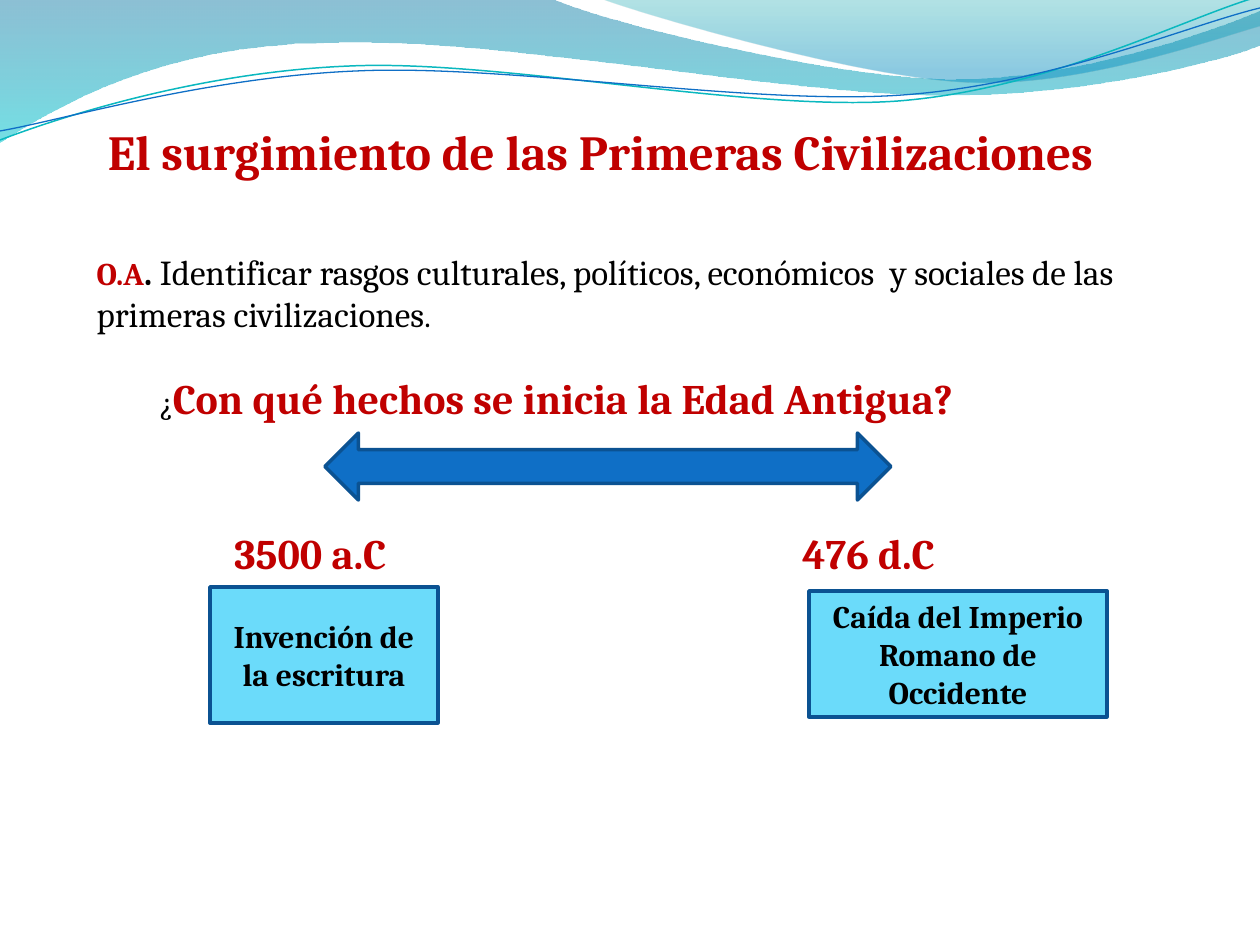
from lxml import etree
from pptx import Presentation, util as u
from pptx.dml.color import RGBColor
from pptx.enum import shapes, text
from pptx.oxml import ns

SCALE = u.Inches(1) / 126
COLORS = {"red": "C00000", "black": "000000", "blue": "0F6FC6", "edge": "0B5292",
          "sky": "6BDBFA", "teal": "0AB8BF"}
FONT = "Cambria"

BANDS = [
    ([(0, 0), (554, 0), (600, 21, 837, 79, 955, 79), (1075, 79, 1207, 33, 1260, 11),
      (1260, 45), (1239, 55, 1096, 96, 940, 95), (784, 95, 481, 35, 324, 43),
      (163, 45, 58, 105, 0, 142)],
     [(0, "0074A1", 45), (100, "00C6CF", 55)]),
    ([(604, 0), (641, 14, 859, 78, 969, 82), (1079, 87, 1211, 40, 1260, 26), (1260, 0)],
     [(0, "00A1A9", 30), (80, "008BBF", 45)]),
]
LINES = [
    ([(0, 140), (60, 117, 199, 72, 349, 66), (498, 59, 747, 112, 898, 101),
      (1050, 89, 1182, 19, 1257, -3)], "teal", 0.85),
    ([(0, 131), (59, 121, 207, 77, 357, 71), (508, 64, 752, 106, 903, 95),
      (1053, 84, 1186, 26, 1260, 8)], "blue", 0.75),
]


def px(n):
    return u.Emu(round(n * SCALE))


def color(name):
    return RGBColor.from_string(COLORS[name])


def write(para, words, size=18, tint="black", bold=False):
    run = para.add_run()
    run.text = words
    font = run.font
    font.name, font.size, font.bold = FONT, u.Pt(size), bold
    font.color.rgb = color(tint)


def bend(shape, parts):
    nodes = iter(list(shape._element.iter(ns.qn("a:lnTo"))))
    for part in parts[1:]:
        node = next(nodes)
        if len(part) == 2:
            continue
        curve = etree.Element(ns.qn("a:cubicBezTo"))
        node.addprevious(curve)
        for knot in (node, next(nodes), next(nodes)):
            curve.append(knot[0])
            knot.getparent().remove(knot)


def trace(slide, parts, x, y, close):
    points = [(part[i] + x, part[i + 1] + y)
              for part in parts for i in range(0, len(part), 2)]
    pen = slide.shapes.build_freeform(*points[0], scale=SCALE)
    pen.add_line_segments(points[1:], close=close)
    shape = pen.convert_to_shape()
    bend(shape, parts)
    shape.shadow.inherit = False
    shape.fill.background()
    return shape


def shade(shape, stops):
    props = shape._element.spPr
    grad = etree.Element(ns.qn("a:gradFill"), rotWithShape="1")
    row = etree.SubElement(grad, ns.qn("a:gsLst"))
    for pos, tint, alpha in stops:
        stop = etree.SubElement(row, ns.qn("a:gs"), pos=str(pos * 1000))
        fill = etree.SubElement(stop, ns.qn("a:srgbClr"), val=tint)
        etree.SubElement(fill, ns.qn("a:alpha"), val=str(alpha * 1000))
    etree.SubElement(grad, ns.qn("a:lin"), ang="5400000", scaled="0")
    props.replace(props.find(ns.qn("a:noFill")), grad)


def waves(slide, x, y):
    for parts, stops in BANDS:
        band = trace(slide, parts, x, y, True)
        band.line.fill.background()
        shade(band, stops)
    for parts, tint, width in LINES:
        curve = trace(slide, parts, x, y, False)
        curve.line.color.rgb = color(tint)
        curve.line.width = u.Pt(width)


def frame(shape, box):
    shape.left, shape.top, shape.width, shape.height = map(px, box)
    area = shape.text_frame
    area.word_wrap = True
    area.auto_size = text.MSO_AUTO_SIZE.NONE
    area.vertical_anchor = text.MSO_ANCHOR.TOP
    return area


def title(slide, box):
    area = frame(slide.shapes.title, box)
    area.margin_left = px(24)
    para = area.paragraphs[0]
    para.alignment = text.PP_ALIGN.LEFT
    write(para, "El surgimiento de las Primeras Civilizaciones", size=28, tint="red", bold=True)


def plain(para, gap=0, indent=0):
    para.space_before = u.Pt(gap)
    props = para._p.get_or_add_pPr()
    props.set("marL", str(px(indent)))
    props.set("indent", "0")
    etree.SubElement(props, ns.qn("a:buNone"))


def body(slide, box):
    area = frame(slide.placeholders[1], box)
    goal, ask = area.paragraphs[0], area.add_paragraph()
    plain(goal)
    write(goal, "O.A", tint="red", bold=True)
    write(goal, ".", size=20, bold=True)
    write(goal, " Identificar rasgos culturales, políticos, económicos  y sociales"
                " de las primeras civilizaciones", size=20)
    write(goal, ".")
    plain(ask, gap=22, indent=63)
    write(ask, "¿")
    write(ask, "Con qué hechos se inicia la Edad Antigua?", size=24, tint="red", bold=True)


def block(slide, kind, box, tint, words=""):
    shape = slide.shapes.add_shape(kind, *map(px, box))
    shape.shadow.inherit = False
    shape.fill.solid()
    shape.fill.fore_color.rgb = color(tint)
    shape.line.color.rgb = color("edge")
    shape.line.width = u.Pt(2)
    if words:
        area = shape.text_frame
        area.word_wrap = True
        area.vertical_anchor = text.MSO_ANCHOR.MIDDLE
        para = area.paragraphs[0]
        para.alignment = text.PP_ALIGN.CENTER
        write(para, words, bold=True)


def date(slide, box, words):
    area = frame(slide.shapes.add_textbox(*map(px, box)), box)
    write(area.paragraphs[0], words, size=24, tint="red", bold=True)


def span(slide, x, y):
    kinds = shapes.MSO_SHAPE
    block(slide, kinds.LEFT_RIGHT_ARROW, (x + 115, y, 566, 67), "blue")
    date(slide, (x + 12, y + 88, 200, 62), "3500 a.C")
    date(slide, (x + 580, y + 88, 200, 62), "476 d.C")
    block(slide, kinds.RECTANGLE, (x, y + 154, 228, 136), "sky", "Invención de la escritura")
    block(slide, kinds.RECTANGLE, (x + 599, y + 158, 298, 126), "sky",
          "Caída del Imperio Romano de Occidente")


def main():
    deck = Presentation()
    deck.slide_width, deck.slide_height = px(1260), px(945)
    slide = deck.slides.add_slide(deck.slide_layouts[1])
    waves(slide, 0, 0)
    title(slide, (84, 115, 1101, 72))
    body(slide, (84, 244, 1101, 391))
    span(slide, 210, 433)
    deck.save("out.pptx")


if __name__ == "__main__":
    main()
